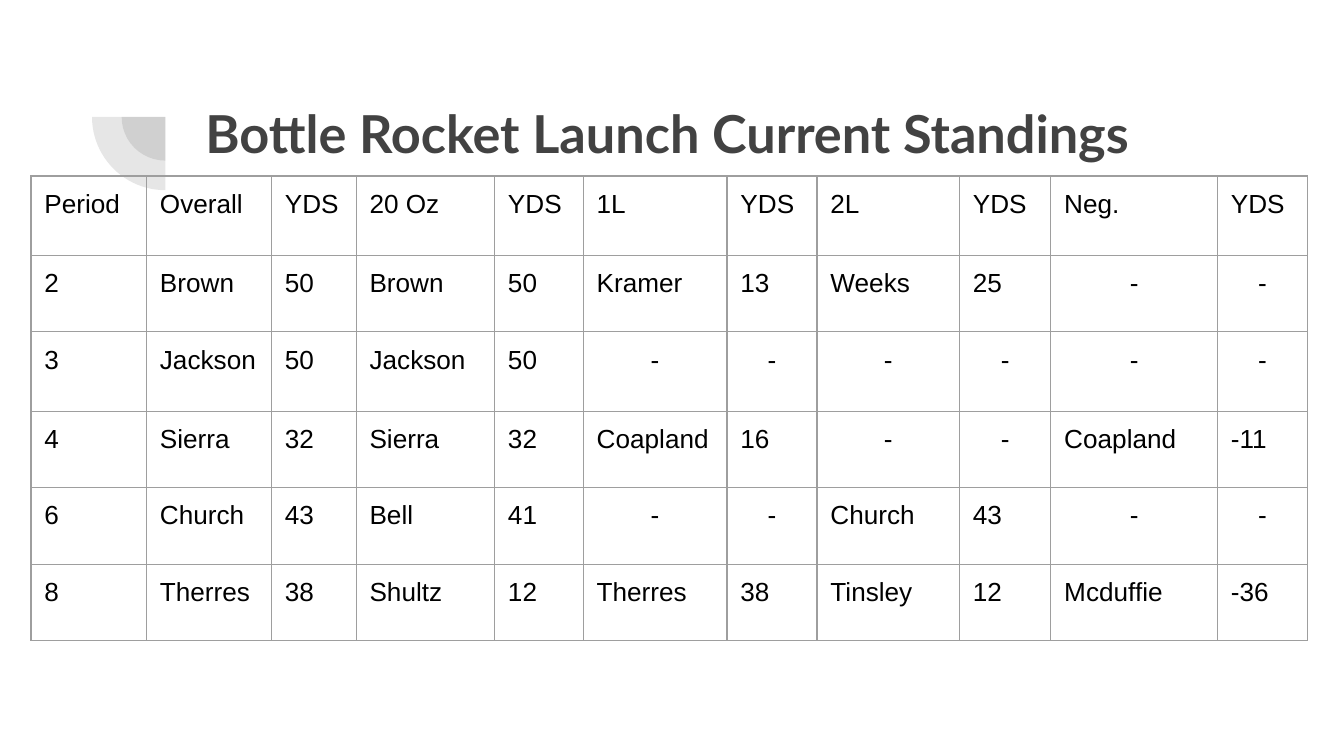
"""Build the bottle rocket launch standings slide."""
from lxml import etree
from pptx import Presentation
from pptx.dml.color import RGBColor
from pptx.enum.shapes import MSO_SHAPE
from pptx.enum.text import MSO_ANCHOR, PP_ALIGN
from pptx.oxml.ns import qn
from pptx.util import Inches, Pt

PIE = MSO_SHAPE.PIE
TOP = MSO_ANCHOR.TOP
LEFT, CENTER = PP_ALIGN.LEFT, PP_ALIGN.CENTER

COLORS = {"title": "424242", "text": "000000", "grid": "9E9E9E"}
TITLE = "Bottle Rocket Launch Current Standings"
STANDINGS = [
    ["Period", "Overall", "YDS", "20 Oz", "YDS", "1L", "YDS", "2L", "YDS", "Neg.", "YDS"],
    ["2", "Brown", "50", "Brown", "50", "Kramer", "13", "Weeks", "25", "-", "-"],
    ["3", "Jackson", "50", "Jackson", "50", "-", "-", "-", "-", "-", "-"],
    ["4", "Sierra", "32", "Sierra", "32", "Coapland", "16", "-", "-", "Coapland", "-11"],
    ["6", "Church", "43", "Bell", "41", "-", "-", "Church", "43", "-", "-"],
    ["8", "Therres", "38", "Shultz", "12", "Therres", "38", "Tinsley", "12", "Mcduffie", "-36"],
]
SLIDE_WIDTH = 10
SLIDE_HEIGHT = SLIDE_WIDTH * 9 / 16
COLUMN_WIDTHS = [0.86, 0.93, 0.63, 1.03, 0.66, 1.07, 0.67, 1.06, 0.68, 1.24, 0.67]
ROW_HEIGHTS = [0.59, 0.57, 0.59, 0.57, 0.57, 0.57]
PIE_CENTER = (1.23, 0.87)
PIE_SIZES = [0.65, 1.09]
PIE_OPACITY = 13
MARGIN = Inches(0.1)


def add_quarter(page, size):
    left, top = (middle - size / 2 for middle in PIE_CENTER)
    quarter = page.shapes.add_shape(PIE, Inches(left), Inches(top), Inches(size), Inches(size))
    quarter.adjustments[0] = 108
    quarter.adjustments[1] = 162
    quarter.rotation = 270
    quarter.shadow.inherit = False
    quarter.line.fill.background()
    quarter.fill.solid()
    quarter.fill.fore_color.rgb = RGBColor.from_string(COLORS["title"])
    color = next(quarter.element.spPr.iter(qn("a:srgbClr")))
    etree.SubElement(color, qn("a:alpha"), val=str(PIE_OPACITY * 1000))


def write(frame, text, font, size, color, bold=False, align=LEFT):
    para = frame.paragraphs[0]
    para.alignment = align
    span = para.add_run()
    span.text = text
    span.font.name = font
    span.font.size = Pt(size)
    span.font.bold = bold
    span.font.color.rgb = RGBColor.from_string(color)


def set_insets(holder):
    holder.vertical_anchor = TOP
    holder.margin_left = holder.margin_right = MARGIN
    holder.margin_top = holder.margin_bottom = MARGIN


def add_borders(cell):
    properties = cell._tc.get_or_add_tcPr()
    for index, side in enumerate(("a:lnL", "a:lnR", "a:lnT", "a:lnB")):
        line = etree.Element(qn(side), w=str(Pt(0.75)))
        fill = etree.SubElement(line, qn("a:solidFill"))
        etree.SubElement(fill, qn("a:srgbClr"), val=COLORS["grid"])
        properties.insert(index, line)


def add_title(page):
    box = page.shapes.add_textbox(Inches(1.43), Inches(0.65), Inches(7.69), Inches(1.09))
    box.text_frame.word_wrap = True
    set_insets(box.text_frame)
    write(box.text_frame, TITLE, "Lato", 28, COLORS["title"], bold=True)


def add_standings(page):
    frame = page.shapes.add_table(
        len(STANDINGS), len(COLUMN_WIDTHS), Inches(0.23), Inches(1.31),
        Inches(sum(COLUMN_WIDTHS)), Inches(sum(ROW_HEIGHTS)))
    table = frame.table
    table.first_row = False
    table.horz_banding = False
    for column, width in zip(table.columns, COLUMN_WIDTHS):
        column.width = Inches(width)
    for row, height, entries in zip(table.rows, ROW_HEIGHTS, STANDINGS):
        row.height = Inches(height)
        for cell, entry in zip(row.cells, entries):
            align = CENTER if entry == "-" else LEFT
            write(cell.text_frame, entry, "Arial", 14, COLORS["text"], align=align)
            set_insets(cell)
            cell.fill.background()
            add_borders(cell)


def main():
    deck = Presentation()
    deck.slide_width, deck.slide_height = Inches(SLIDE_WIDTH), Inches(SLIDE_HEIGHT)
    page = deck.slides.add_slide(deck.slide_layouts[6])
    for size in PIE_SIZES:
        add_quarter(page, size)
    add_title(page)
    add_standings(page)
    deck.save("out.pptx")


if __name__ == "__main__":
    main()
